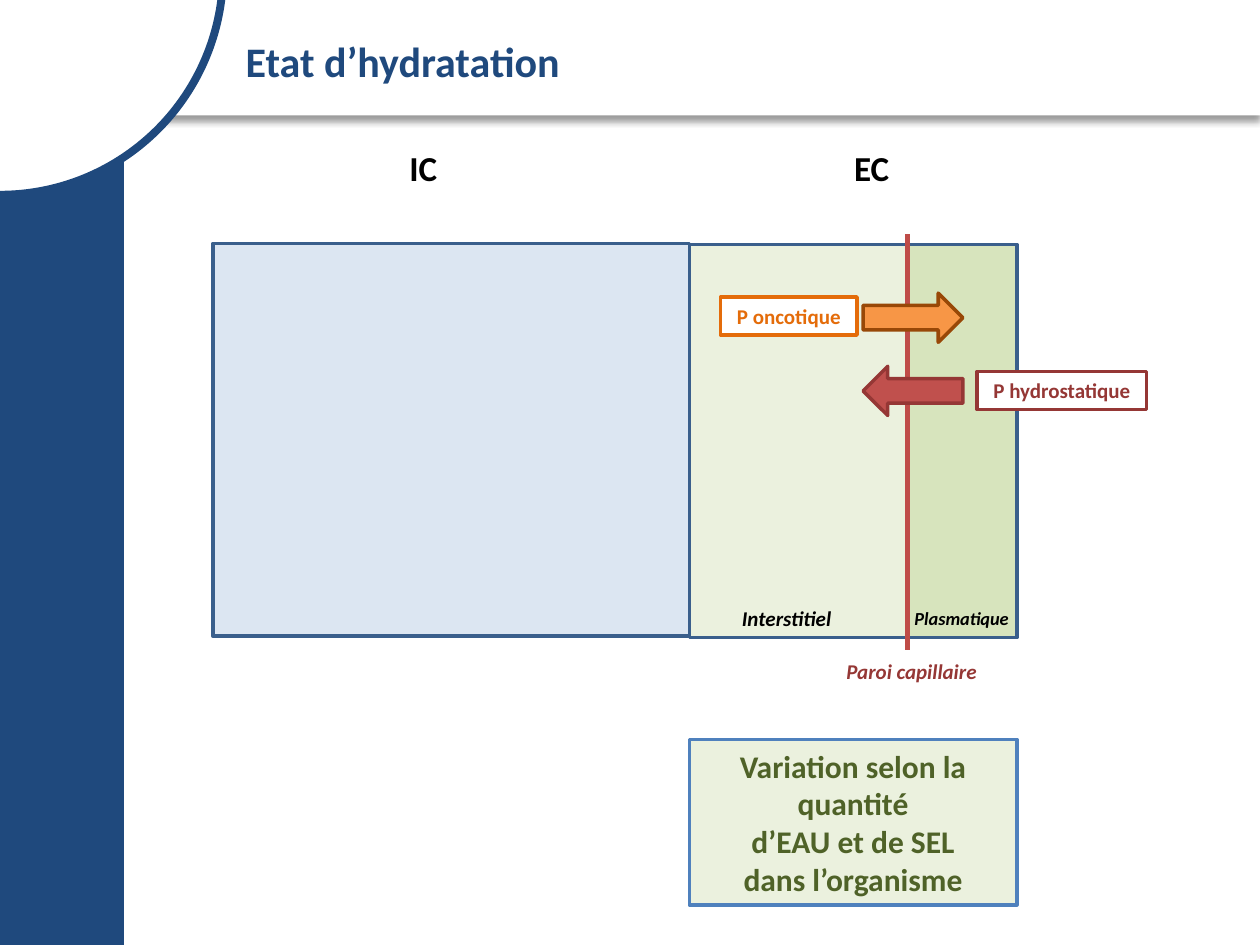
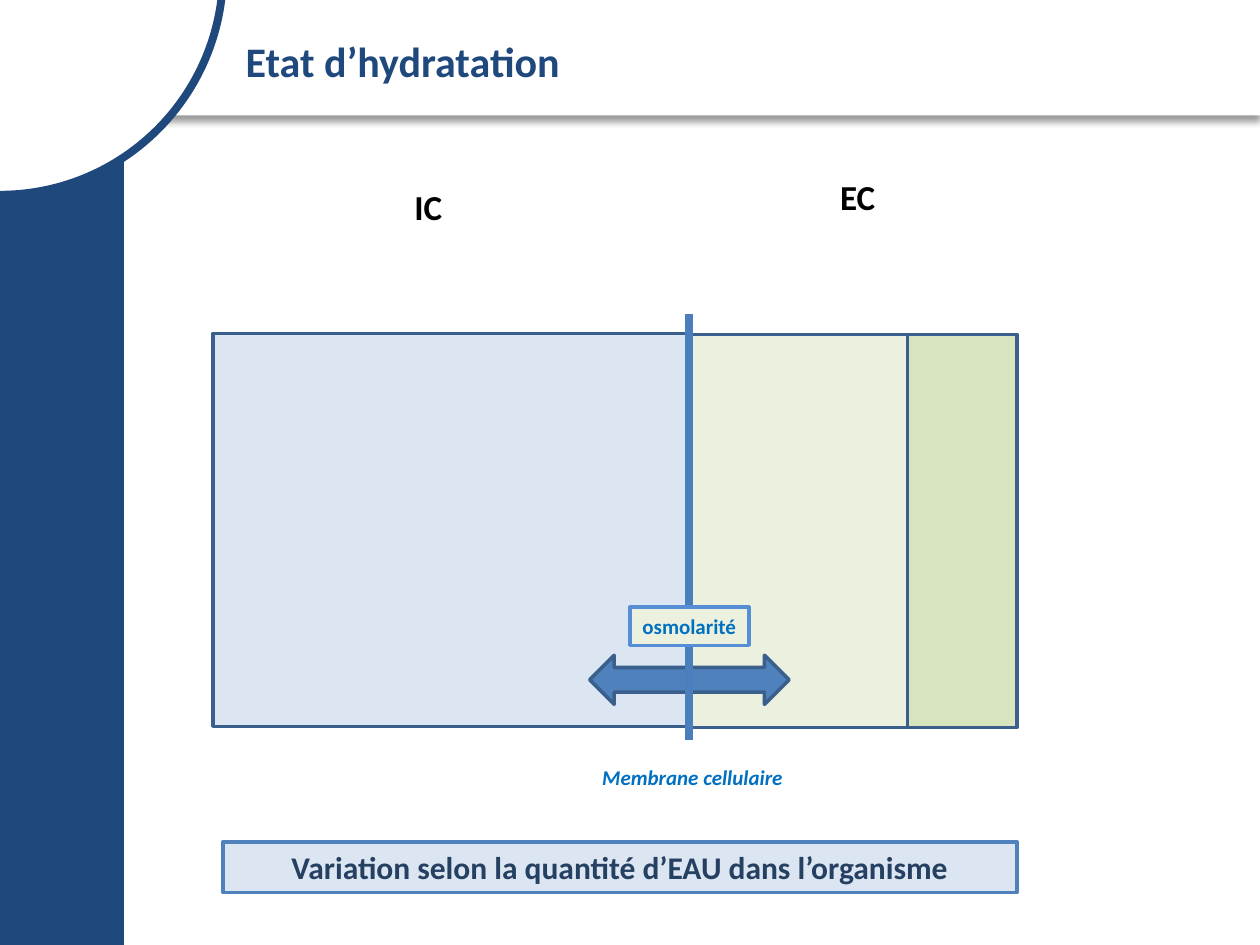
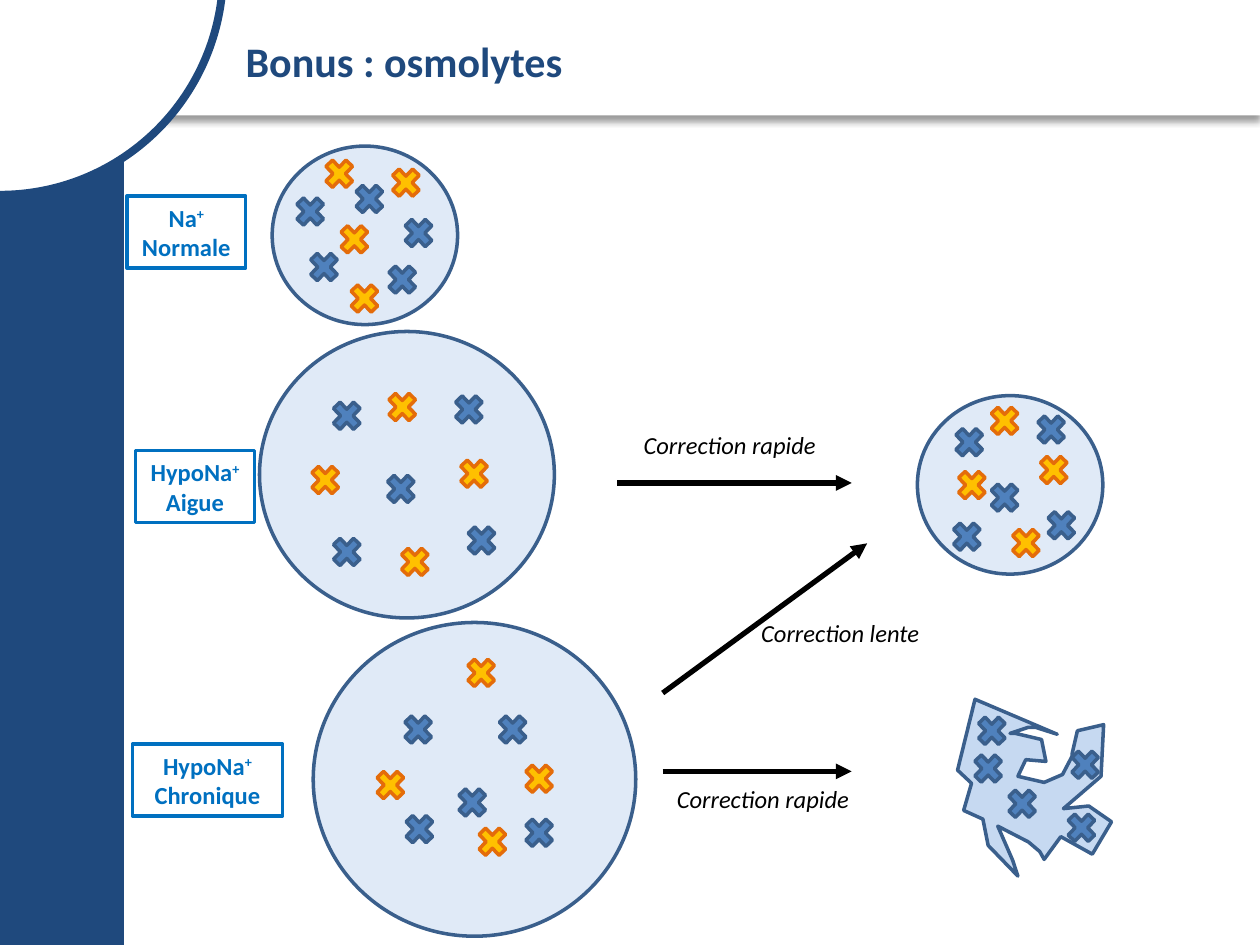
import pptx
import pptx.util
import pptx.dml.color
import pptx.enum.shapes
import pptx.enum.text
import pptx.oxml.ns
from lxml import etree

Pt = pptx.util.Pt
RGBColor = pptx.dml.color.RGBColor
Kind = pptx.enum.shapes.MSO_SHAPE
Align = pptx.enum.text.PP_ALIGN
Anchor = pptx.enum.text.MSO_ANCHOR
qn = pptx.oxml.ns.qn

FONT = "Calibri"
BLACK = RGBColor(0x00, 0x00, 0x00)
WHITE = RGBColor(0xFF, 0xFF, 0xFF)
NAVY = RGBColor(0x1F, 0x49, 0x7D)
INK = RGBColor(0x25, 0x40, 0x61)
BLUE = RGBColor(0x4F, 0x81, 0xBD)
STEEL = RGBColor(0x3A, 0x5F, 0x8C)
WALL = RGBColor(0x4B, 0x7E, 0xBC)
SKY = RGBColor(0x55, 0x8E, 0xD5)
AZURE = RGBColor(0x00, 0x70, 0xC0)
PALE = RGBColor(0xDC, 0xE6, 0xF2)
CELL = RGBColor(0xC6, 0xD9, 0xF1)
MINT = RGBColor(0xEB, 0xF1, 0xDE)
GREEN = RGBColor(0xD7, 0xE4, 0xBD)
MOSS = RGBColor(0x4F, 0x62, 0x28)
ORANGE = RGBColor(0xF7, 0x96, 0x46)
AMBER = RGBColor(0xE4, 0x6C, 0x0A)
BROWN = RGBColor(0x98, 0x48, 0x07)
GOLD = RGBColor(0xFF, 0xC0, 0x00)
RED = RGBColor(0xC0, 0x50, 0x4D)
ROSE = RGBColor(0xBF, 0x4C, 0x48)
WINE = RGBColor(0x95, 0x37, 0x35)

WIDE, HIGH = 720, 540
LEFT, IC_W, INT_W, PLASMA_W, TANK_H = 121.7, 272.2, 124.6, 62.6, 224.6
MEMBRANE = LEFT + IC_W
CAPILLARY = MEMBRANE + INT_W
CROSS_W, CROSS_H = 22, 23
SMALL = (106, 102)

# Offsets of the crosses from the corner of their cell: blue, then gold
NORMAL = ([(10.8, 25.9), (72.7, 38.2), (44.6, 18.7), (18.7, 57.6), (63.4, 64.8)],
          [(27.4, 4.3), (65.5, 9.4), (41.8, 75.6), (36, 41.8)])
ACUTE = ([(38.9, 36.7), (108.7, 33.1), (69.8, 78.5), (38.9, 114.5), (115.9, 108)],
         [(70.6, 31.7), (111.6, 69.8), (77.8, 120.2), (26.6, 73.4)])
CHRONIC = ([(49, 49.7), (103, 49.7), (79.9, 91.4), (49.7, 106.6), (118.1, 108.7)],
           [(85, 17.3), (118.1, 77.8), (91.4, 113.8), (33.1, 81.4)])
CURED = ([(18.7, 15.1), (65.5, 7.9), (38.9, 46.8), (17.3, 69.1), (71.3, 62.6)],
         [(38.9, 2.9), (67, 31), (51.1, 72.7), (20.2, 39.6)])
SHRUNK = ([(6.5, 28.1), (61.9, 25.9), (8.6, 6.5), (25.9, 48.2), (59.8, 61.9)], [])

SHRED = [
    (57, 20), (10, 0), (0, 40.5), (8, 48), (3.5, 63.5), (14.5, 68.5),
    (17.5, 83.5), (34.5, 101), (31.5, 92), (23, 72.5), (40.5, 81.5),
    (47, 87), (49.5, 91.5), (59, 78.5), (77, 88.5), (88, 70), (75, 61),
    (60.5, 62.5), (82, 44), (83.5, 14.5), (68.5, 18), (65.5, 31),
    (65.5, 32.5), (60, 43), (49.5, 47.5), (34.5, 44), (39, 34.5),
    (50.5, 35.5), (48, 23), (39.5, 21), (33, 19.5), (30, 19.5),
    (40.5, 16), (44.5, 16),
]


def paint(shape, fill, edge=None, width=2):
    shape.shadow.inherit = False
    if fill is None:
        shape.fill.background()
    else:
        shape.fill.solid()
        shape.fill.fore_color.rgb = fill
    if edge is None:
        shape.line.fill.background()
    else:
        shape.line.color.rgb = edge
        shape.line.width = Pt(width)
    return shape


def form(slide, kind, box, fill, edge=None, width=2):
    shape = slide.shapes.add_shape(kind, *map(Pt, box))
    return paint(shape, fill, edge, width)


def write(shape, lines, size, color, bold=True, italic=False, align=Align.LEFT):
    """Fill a shape with lines; pieces between ^ marks are raised."""
    frame = shape.text_frame
    frame.word_wrap = True
    for i, line in enumerate(lines):
        para = frame.add_paragraph() if i else frame.paragraphs[0]
        para.alignment = align
        for j, piece in enumerate(line.split("^")):
            if not piece:
                continue
            run = para.add_run()
            run.text = piece
            font = run.font
            font.name, font.size = FONT, Pt(size)
            font.bold, font.italic = bold, italic
            font.color.rgb = color
            if j % 2:
                run._r.get_or_add_rPr().set("baseline", "30000")


def note(slide, box, words, size, color, bold=True, italic=True):
    write(slide.shapes.add_textbox(*map(Pt, box)), [words], size, color, bold, italic)


def tag(slide, box, lines, size, color, fill, edge, align=Align.CENTER):
    write(form(slide, Kind.RECTANGLE, box, fill, edge), lines, size, color, align=align)


def stroke(slide, start, end, color, width, head=False):
    line = slide.shapes.add_connector(
        pptx.enum.shapes.MSO_CONNECTOR.STRAIGHT, *map(Pt, start + end))
    line.line.color.rgb = color
    line.line.width = Pt(width)
    props = line.element.spPr
    if head:
        etree.SubElement(props.find(qn("a:ln")), qn("a:tailEnd"), type="triangle")
    etree.SubElement(props, qn("a:effectLst"))


def shade(shape):
    """Cast a soft shadow straight down."""
    effect = shape.element.spPr.find(qn("a:effectLst"))
    outer = etree.SubElement(effect, qn("a:outerShdw"), blurRad=str(Pt(4)),
                             dist=str(Pt(3)), dir="5400000", rotWithShape="0")
    tone = etree.SubElement(outer, qn("a:srgbClr"), val=str(BLACK))
    etree.SubElement(tone, qn("a:alpha"), val="40000")


def page(deck, words):
    """Add a slide with its title, top band, side band and corner ring."""
    slide = deck.slides.add_slide(deck.slide_layouts[5])
    shade(form(slide, Kind.RECTANGLE, (0, 0, WIDE, 66), WHITE))
    title = slide.shapes.title
    slide.shapes.element.append(title.element)
    title.left, title.top, title.width, title.height = map(Pt, (133.2, 9.4, 572.4, 51))
    title.text_frame.vertical_anchor = Anchor.MIDDLE
    write(title, [words], 24, NAVY)
    form(slide, Kind.RECTANGLE, (0, 0, 70.8, HIGH), NAVY)
    form(slide, Kind.OVAL, (-127.5, -144, 255, 255.3), WHITE, NAVY, 4.5)
    return slide


def tank(slide, top):
    """Draw the IC, interstitial and plasma compartments side by side."""
    left = LEFT
    for wide, fill, drop in ((IC_W, PALE, 0), (INT_W, MINT, 0.7), (PLASMA_W, GREEN, 0.7)):
        form(slide, Kind.RECTANGLE, (left, top + drop, wide, TANK_H), fill, STEEL)
        left += wide


def arrow(slide, left, top, fill, edge, back=False):
    shape = form(slide, Kind.RIGHT_ARROW, (left, top, 57, 28.1), fill, edge)
    if back:
        shape.rotation = 180


def salts(slide, left, top, spots):
    for places, fill, edge in zip(spots, (BLUE, GOLD), (STEEL, AMBER)):
        for x, y in places:
            form(slide, Kind.MATH_MULTIPLY,
                 (left + x, top + y, CROSS_W, CROSS_H), fill, edge)


def cell(slide, box, spots):
    shape = form(slide, Kind.OVAL, box, CELL, STEEL)
    tone = shape.element.spPr.find(qn("a:solidFill"))[0]
    etree.SubElement(tone, qn("a:alpha"), val="53000")
    salts(slide, box[0], box[1], spots)


def shred(slide, left, top):
    """Draw the shrunken cell."""
    dots = [(Pt(left + x), Pt(top + y)) for x, y in SHRED]
    pen = slide.shapes.build_freeform(*dots[0])
    pen.add_line_segments(dots[1:], close=True)
    paint(pen.convert_to_shape(), CELL, STEEL)
    salts(slide, left, top, SHRUNK)


def vessel(deck):
    """Slide on exchanges across the capillary wall."""
    slide = page(deck, "Etat d’hydratation")
    top = 139
    note(slide, (226.8, 79.9, 90.7, 31.5), "IC", 20, BLACK, italic=False)
    note(slide, (481, 79.9, 40.3, 31.5), "EC", 20, BLACK, italic=False)
    tank(slide, top)
    tag(slide, (411.8, top + 30.7, 78, 21.8), ["P oncotique"], 12, AMBER, WHITE, AMBER)
    tag(slide, (558.4, top + 73.3, 96.8, 21.8), ["P hydrostatique"], 12, WINE, WHITE, WINE)
    stroke(slide, (CAPILLARY, top - 5), (CAPILLARY, top + 232.5), ROSE, 3)
    arrow(slide, 493.2, top + 28.5, ORANGE, BROWN)
    arrow(slide, 493.2, top + 70.3, RED, WINE, back=True)
    note(slide, (476.6, top + 234, 91, 21.8), "Paroi capillaire", 12, WINE)
    note(slide, (416.9, top + 203.7, 67.7, 21.8), "Interstitiel", 12, BLACK)
    note(slide, (515.5, top + 204.4, 79.2, 20.7), "Plasmatique", 10.5, BLACK)
    tag(slide, (MEMBRANE, 422.6, INT_W + PLASMA_W, 94.5),
        ["Variation selon la quantité", "d’EAU et de SEL", "dans l’organisme"],
        18, MOSS, MINT, BLUE)


def osmosis(deck):
    """Slide on exchanges across the cell membrane."""
    slide = page(deck, "Etat d’hydratation")
    top = 190.5
    note(slide, (229.7, 102.2, 90.7, 31.5), "IC", 20, BLACK, italic=False)
    note(slide, (473, 96.7, 40.3, 31.5), "EC", 20, BLACK, italic=False)
    tank(slide, top)
    arrow(slide, MEMBRANE - 57, top + 183.9, BLUE, STEEL, back=True)
    arrow(slide, MEMBRANE, top + 183.9, BLUE, STEEL)
    stroke(slide, (MEMBRANE, top - 11.2), (MEMBRANE, top + 232.5), WALL, 4.5)
    tag(slide, (360, top + 156.5, 67.9, 21.8), ["osmolarité"], 12,
        AZURE, MINT, SKY, Align.LEFT)
    note(slide, (337, top + 243, 120, 21.8), "Membrane cellulaire", 12, AZURE)
    tag(slide, (127.4, 481, 453.7, 29), ["Variation selon la quantité d’EAU dans l’organisme"],
        18, INK, PALE, BLUE)


def bonus(deck):
    slide = page(deck, "Bonus : osmolytes")
    shred(slide, 547.2, 399.6)
    cell(slide, (524.2, 226.1) + SMALL, CURED)
    cell(slide, (155.5, 83.5) + SMALL, NORMAL)
    cell(slide, (148.3, 189.4, 168.5, 163.7), ACUTE)
    cell(slide, (179, 355.7, 184.3, 179.3), CHRONIC)
    for left, top, wide, lines in (
            (72.5, 112, 67.9, ["Na^+^", "Normale"]),
            (77.5, 257.5, 67.9, ["HypoNa^+^", "Aigue"]),
            (75.7, 425.2, 85.7, ["HypoNa^+^", "Chronique"])):
        tag(slide, (left, top, wide, 41.2), lines, 14, AZURE, None, AZURE)
    for start, end in (((352.8, 276), (486.7, 276)),
                       ((378.7, 440.8), (486.7, 440.8)),
                       ((378.7, 396), (495.5, 310.5))):
        stroke(slide, start, end, BLACK, 3, head=True)
    for left, top, words in ((360.7, 242.2, "Correction rapide"),
                             (379.7, 444.5, "Correction rapide"),
                             (427.9, 349.9, "Correction lente")):
        note(slide, (left, top, 114, 24.2), words, 14, BLACK, bold=False)


def main():
    deck = pptx.Presentation()
    deck.slide_width, deck.slide_height = Pt(WIDE), Pt(HIGH)
    vessel(deck)
    osmosis(deck)
    bonus(deck)
    deck.save("out.pptx")


if __name__ == "__main__":
    main()
